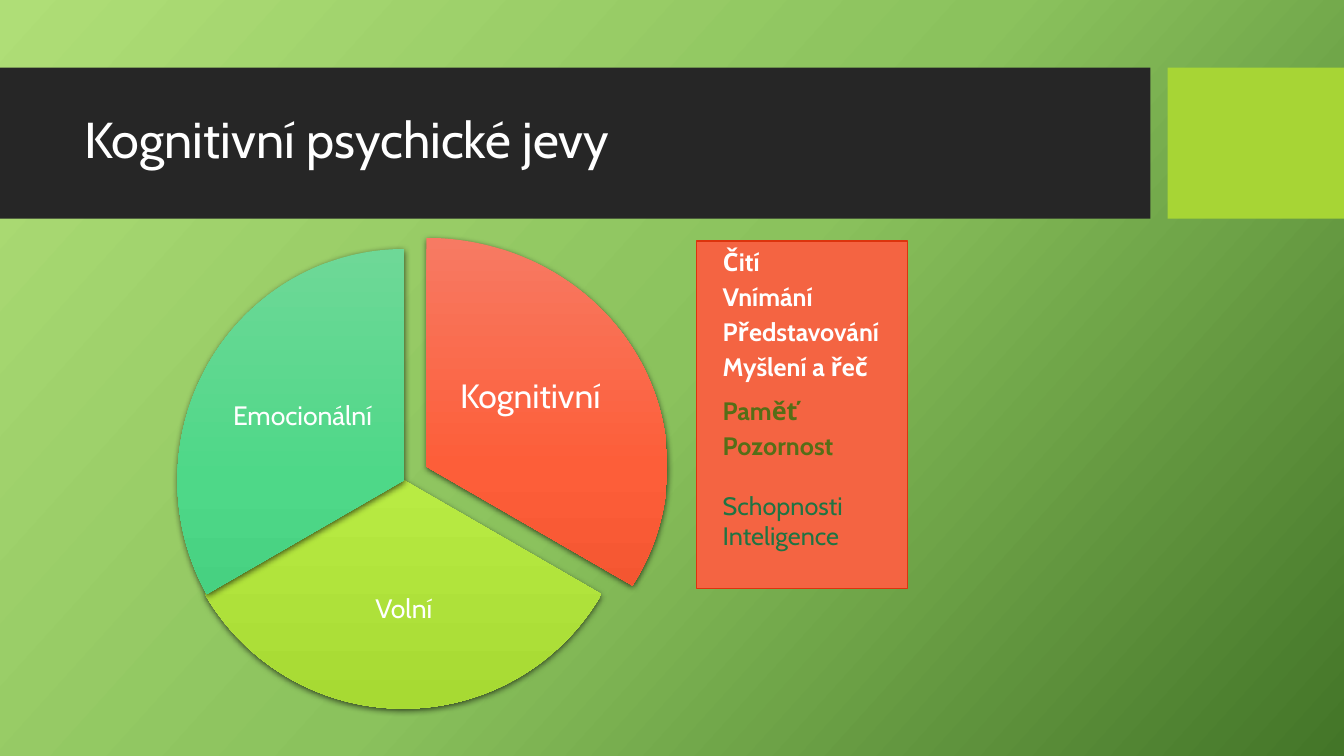
from lxml import etree
from pptx import Presentation
from pptx.dml.color import RGBColor
from pptx.enum.shapes import MSO_SHAPE as Preset
from pptx.enum.text import MSO_ANCHOR as Anchor, PP_ALIGN as Align
from pptx.oxml.ns import qn
from pptx.util import Inches, Pt

FONT = "Cabin"
WHITE = "FFFFFF"
SLICES = [
    ("Kognitivní", 24, (162, 18), ("F77A63", "FD5E39", "EB4E29"),
     (1.84, 2.36, 4.78, 4.54), (4.45, 3.19, 1.62, 1.51)),
    ("Volní", 19, (18, 90), ("BDE867", "B8EB43", "A7DA33"),
     (1.73, 2.49, 4.54, 4.54), (2.98, 5.35, 2.05, 1.4)),
    ("Emocionální", 19, (90, 162), ("6ED897", "4ED888", "3EC778"),
     (1.76, 2.47, 4.49, 4.59), (2.24, 3.37, 1.52, 1.53)),
]
PROCESSES = ["Čití", "Vnímání", "Představování", "Myšlení a řeč"]
CONDITIONS = ["Paměť", "Pozornost"]
ABILITIES = ["Schopnosti", "Inteligence"]


def color(code):
    """Turn a hex string into a colour."""
    return RGBColor.from_string(code)


def place(box):
    """Turn left, top, width and height in inches into lengths."""
    return [Inches(length) for length in box]


def paint_gradient(fill, element, colors, angle):
    """Fill with evenly spaced colours, turning clockwise by angle."""
    fill.gradient()
    fill.gradient_angle = 360 - angle
    stops = element.find(".//" + qn("a:gsLst"))
    for stop in list(stops):
        stops.remove(stop)
    for index, code in enumerate(colors):
        position = 100000 * index // (len(colors) - 1)
        stop = etree.SubElement(stops, qn("a:gs"), pos=str(position))
        etree.SubElement(stop, qn("a:srgbClr"), val=code)


def cast_shadow(shape):
    """Drop a soft black shadow straight below the shape."""
    effects = shape._element.spPr.find(qn("a:effectLst"))
    shadow = etree.SubElement(effects, qn("a:outerShdw"), blurRad=str(Pt(4.5)),
                              dist=str(Pt(1.5)), dir="5400000", rotWithShape="0")
    black = etree.SubElement(shadow, qn("a:srgbClr"), val="000000")
    etree.SubElement(black, qn("a:alpha"), val="63000")


def add_block(slide, box, fill, border=None):
    """Add a flat rectangle with an optional thin border."""
    block = slide.shapes.add_shape(Preset.RECTANGLE, *place(box))
    block.shadow.inherit = False
    block.fill.solid()
    block.fill.fore_color.rgb = color(fill)
    if border:
        block.line.color.rgb = color(border)
        block.line.width = Pt(1)
    else:
        block.line.fill.background()


def add_text(slide, box, lines, size, code, bold=False):
    """Add a text box with one paragraph per line and return its frame."""
    frame = slide.shapes.add_textbox(*place(box)).text_frame
    frame.word_wrap = True
    frame.text = "\n".join(lines)
    for paragraph in frame.paragraphs:
        style = paragraph.runs[0].font
        style.name, style.size, style.bold = FONT, Pt(size), bold
        style.color.rgb = color(code)
    return frame


def add_header(slide, box, title):
    """Add the dark title band and the green block to its right."""
    left, top, width, height = box
    accent = 1.75
    band = width - accent - 0.17
    add_block(slide, (left, top, band, height), "262626")
    add_block(slide, (left + width - accent, top, accent, height), "A7D535")
    frame = add_text(slide, (left + 0.74, top + 0.15, band - 0.9, 1.18), [title], 36, WHITE)
    frame.vertical_anchor = Anchor.MIDDLE
    frame.paragraphs[0].line_spacing = 0.9


def add_slice(slide, box, label_box, label, size, angles, colors):
    """Add one slice of the circle with its centred label."""
    wedge = slide.shapes.add_shape(Preset.PIE, *place(box))
    wedge.adjustments[0], wedge.adjustments[1] = angles
    wedge.shadow.inherit = False
    wedge.line.fill.background()
    paint_gradient(wedge.fill, wedge._element, colors, 90)
    cast_shadow(wedge)
    frame = add_text(slide, label_box, [label], size, WHITE)
    frame.vertical_anchor = Anchor.MIDDLE
    frame.margin_left = frame.margin_right = Inches(0.03)
    frame.margin_top = frame.margin_bottom = Inches(0.03)
    frame.paragraphs[0].alignment = Align.CENTER
    frame.paragraphs[0].line_spacing = 0.9


def add_cognition_panel(slide, box):
    """Add the orange panel that lists the cognitive phenomena."""
    left, top, width, height = box
    add_block(slide, box, "F46442", "DC340D")
    processes = add_text(slide, (left + 0.16, top, width - 0.16, 1.8),
                         PROCESSES, 18, WHITE, True)
    for paragraph in processes.paragraphs[1:]:
        paragraph.space_before = Pt(3.4)
    others = add_text(slide, (left + 0.16, top + 1.48, width - 0.16, 1.68),
                      CONDITIONS + ABILITIES, 18, "556E17", True)
    others.paragraphs[1].space_before = Pt(3.4)
    abilities = others.paragraphs[len(CONDITIONS):]
    abilities[0].space_before = Pt(21.5)
    for paragraph in abilities:
        style = paragraph.runs[0].font
        style.bold = False
        style.color.rgb = color("1F7443")


def main():
    """Build the slide and save it."""
    deck = Presentation()
    deck.slide_width, deck.slide_height = Inches(13.33), Inches(7.5)
    slide = deck.slides.add_slide(deck.slide_layouts[6])
    paint_gradient(slide.background.fill, slide._element,
                   ("AFDE77", "8BC25D", "437528"), 42)
    add_header(slide, (0, 0.67, 13.33, 1.5), "Kognitivní psychické jevy")
    for label, size, angles, colors, box, label_box in SLICES:
        add_slice(slide, box, label_box, label, size, angles, colors)
    add_cognition_panel(slide, (6.91, 2.39, 2.09, 3.45))
    deck.save("out.pptx")


if __name__ == "__main__":
    main()
